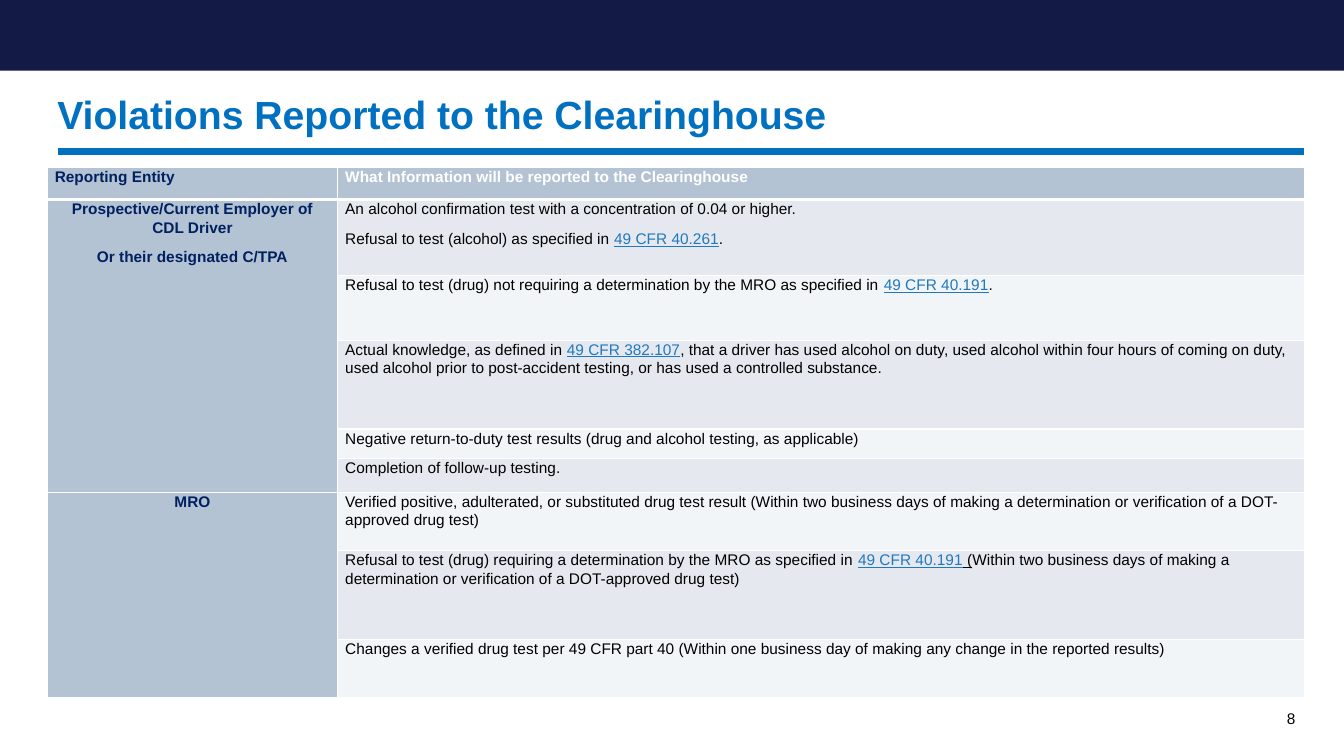
from dataclasses import dataclass

from lxml import etree
from pptx import Presentation
from pptx.dml.color import RGBColor
from pptx.enum.shapes import MSO_CONNECTOR, MSO_SHAPE
from pptx.enum.text import MSO_ANCHOR, MSO_AUTO_SIZE, PP_ALIGN
from pptx.oxml.ns import qn
from pptx.util import Cm, Pt

LEFT, CENTER, RIGHT = PP_ALIGN.LEFT, PP_ALIGN.CENTER, PP_ALIGN.RIGHT
MIDDLE, BOTTOM = MSO_ANCHOR.MIDDLE, MSO_ANCHOR.BOTTOM
NO_AUTOFIT = MSO_AUTO_SIZE.NONE
RECTANGLE, STRAIGHT = MSO_SHAPE.RECTANGLE, MSO_CONNECTOR.STRAIGHT

FONT = "Arial"
BLACK, WHITE, NAVY = "000000", "FFFFFF", "002060"
BLUE, LINK_BLUE, BAR_NAVY = "0070C0", "1F78C0", "121A45"
HEADING_FILL = "B3C3D3"
BAND_FILLS = ("F2F5F7", "E5E9EF")
COLUMN_WIDTHS = (7.32, 24.36)


@dataclass(frozen=True)
class Span:
    text: str
    color: str = BLACK
    bold: bool = False
    underline: bool = False
    size: float = 11


Line = tuple[Span, ...]


@dataclass(frozen=True)
class Violation:
    height: float
    lines: tuple[Line, ...]


@dataclass(frozen=True)
class Entity:
    lines: tuple[Line, ...]
    violations: tuple[Violation, ...]


def heading(text: str, color: str = NAVY) -> Line:
    return (Span(text, color, bold=True),)


def plain(text: str) -> Line:
    return (Span(text),)


def cited(before: str, rule: str, *after: Span) -> Line:
    return (Span(before), Span(rule, LINK_BLUE, underline=True), *after)


HEADER_HEIGHT = 0.81
HEADER = (
    heading("Reporting Entity"),
    heading("What Information will be reported to the Clearinghouse", WHITE),
)
ENTITIES = (
    Entity(
        (heading("Prospective/Current Employer of CDL Driver"),
         heading("Or their designated C/TPA")),
        (
            Violation(1.91, (
                plain("An alcohol confirmation test with a concentration of 0.04 or higher."),
                cited("Refusal to test (alcohol) as specified in ", "49 CFR 40.261", Span(".")),
            )),
            Violation(1.63, (
                cited("Refusal to test (drug) not requiring a determination by the MRO "
                      "as specified in ", "49 CFR 40.191", Span(".")),
            )),
            Violation(2.24, (
                cited("Actual knowledge, as defined in ", "49 CFR 382.107",
                      Span(", that a driver has used alcohol on duty, used alcohol within four "
                           "hours of coming on duty, used alcohol prior to post-accident "
                           "testing, or has used a controlled substance.")),
            )),
            Violation(0.74, (
                plain("Negative return-to-duty test results "
                      "(drug and alcohol testing, as applicable)"),
            )),
            Violation(0.86, (plain("Completion of follow-up testing."),)),
        ),
    ),
    Entity(
        (heading("MRO"),),
        (
            Violation(1.47, (
                plain("Verified positive, adulterated, or substituted drug test result "
                      "(Within two business days of making a determination or verification "
                      "of a DOT-approved drug test)"),
            )),
            Violation(2.24, (
                cited("Refusal to test (drug) requiring a determination by the MRO "
                      "as specified in ", "49 CFR 40.191",
                      Span(" (", underline=True),
                      Span("Within two business days of making a determination or "
                           "verification of a DOT-approved drug test)")),
            )),
            Violation(1.47, (
                plain("Changes a verified drug test per 49 CFR part 40 (Within one business "
                      "day of making any change in the reported results)"),
            )),
        ),
    ),
)


def rgb(color: str) -> RGBColor:
    return RGBColor.from_string(color)


def write_line(para, line: Line, align) -> None:
    para.alignment = align
    for span in line:
        run = para.add_run()
        run.text = span.text
        run.font.name = FONT
        run.font.size = Pt(span.size)
        run.font.bold = span.bold
        run.font.underline = span.underline
        run.font.color.rgb = rgb(span.color)


def write_cell(cell, lines: tuple[Line, ...], align=LEFT) -> None:
    for index, line in enumerate(lines):
        frame = cell.text_frame
        para = frame.add_paragraph() if index else frame.paragraphs[0]
        para.line_spacing = 1.07
        para.space_after = Pt(8)
        write_line(para, line, align)


def format_cell(cell, fill: str, bottom_width: float = 1) -> None:
    cell.margin_left = cell.margin_right = Cm(0.19)
    cell.margin_top = cell.margin_bottom = 0
    properties = cell._tc.get_or_add_tcPr()
    for side, width in (("L", 1), ("R", 1), ("T", 1), ("B", bottom_width)):
        border = etree.SubElement(properties, qn(f"a:ln{side}"), w=str(Pt(width)))
        solid = etree.SubElement(border, qn("a:solidFill"))
        etree.SubElement(solid, qn("a:srgbClr"), val=WHITE)
    cell.fill.solid()
    cell.fill.fore_color.rgb = rgb(fill)


def add_banner(page) -> None:
    bar = page.shapes.add_shape(RECTANGLE, 0, 0, Cm(33.87), Cm(1.78))
    bar.shadow.inherit = False
    bar.fill.solid()
    bar.fill.fore_color.rgb = rgb(BAR_NAVY)
    bar.line.fill.background()
    rule = page.shapes.add_connector(STRAIGHT, Cm(1.47), Cm(3.81), Cm(32.87), Cm(3.81))
    rule.line.color.rgb = rgb(BLUE)
    rule.line.width = Pt(5)
    etree.SubElement(rule._element.spPr, qn("a:effectLst"))


def place_text(box, left: float, top: float, width: float, height: float,
               line: Line, align, anchor) -> None:
    box.left, box.top, box.width, box.height = Cm(left), Cm(top), Cm(width), Cm(height)
    frame = box.text_frame
    frame.word_wrap = True
    frame.auto_size = NO_AUTOFIT
    frame.vertical_anchor = anchor
    write_line(frame.paragraphs[0], line, align)


def add_violations_table(page) -> None:
    violations = [violation for entity in ENTITIES for violation in entity.violations]
    heights = [HEADER_HEIGHT] + [violation.height for violation in violations]
    table = page.shapes.add_table(
        len(heights), len(COLUMN_WIDTHS), Cm(1.19), Cm(4.22),
        Cm(sum(COLUMN_WIDTHS)), Cm(sum(heights))).table
    for column, width in zip(table.columns, COLUMN_WIDTHS):
        column.width = Cm(width)
    for row, height in zip(table.rows, heights):
        row.height = Cm(height)
    for index, line in enumerate(HEADER):
        format_cell(table.cell(0, index), HEADING_FILL, bottom_width=3)
        write_cell(table.cell(0, index), (line,))
    for index, violation in enumerate(violations, start=1):
        format_cell(table.cell(index, 0), HEADING_FILL)
        format_cell(table.cell(index, 1), BAND_FILLS[index % 2])
        write_cell(table.cell(index, 1), violation.lines)
    first = 1
    for entity in ENTITIES:
        following = first + len(entity.violations)
        table.cell(first, 0).merge(table.cell(following - 1, 0))
        write_cell(table.cell(first, 0), entity.lines, CENTER)
        first = following


def main() -> None:
    deck = Presentation()
    deck.slide_width, deck.slide_height = Cm(33.87), Cm(19.05)
    page = deck.slides.add_slide(deck.slide_layouts[5])
    add_banner(page)
    title = Span("Violations Reported to the Clearinghouse", BLUE, bold=True, size=28)
    place_text(page.shapes.title, 1.19, 2.21, 31.67, 1.37, (title,), LEFT, BOTTOM)
    add_violations_table(page)
    number_box = page.shapes.add_textbox(0, 0, 0, 0)
    place_text(number_box, 24.59, 17.58, 8.31, 1.02, plain("8"), RIGHT, MIDDLE)
    deck.save("out.pptx")


if __name__ == "__main__":
    main()
